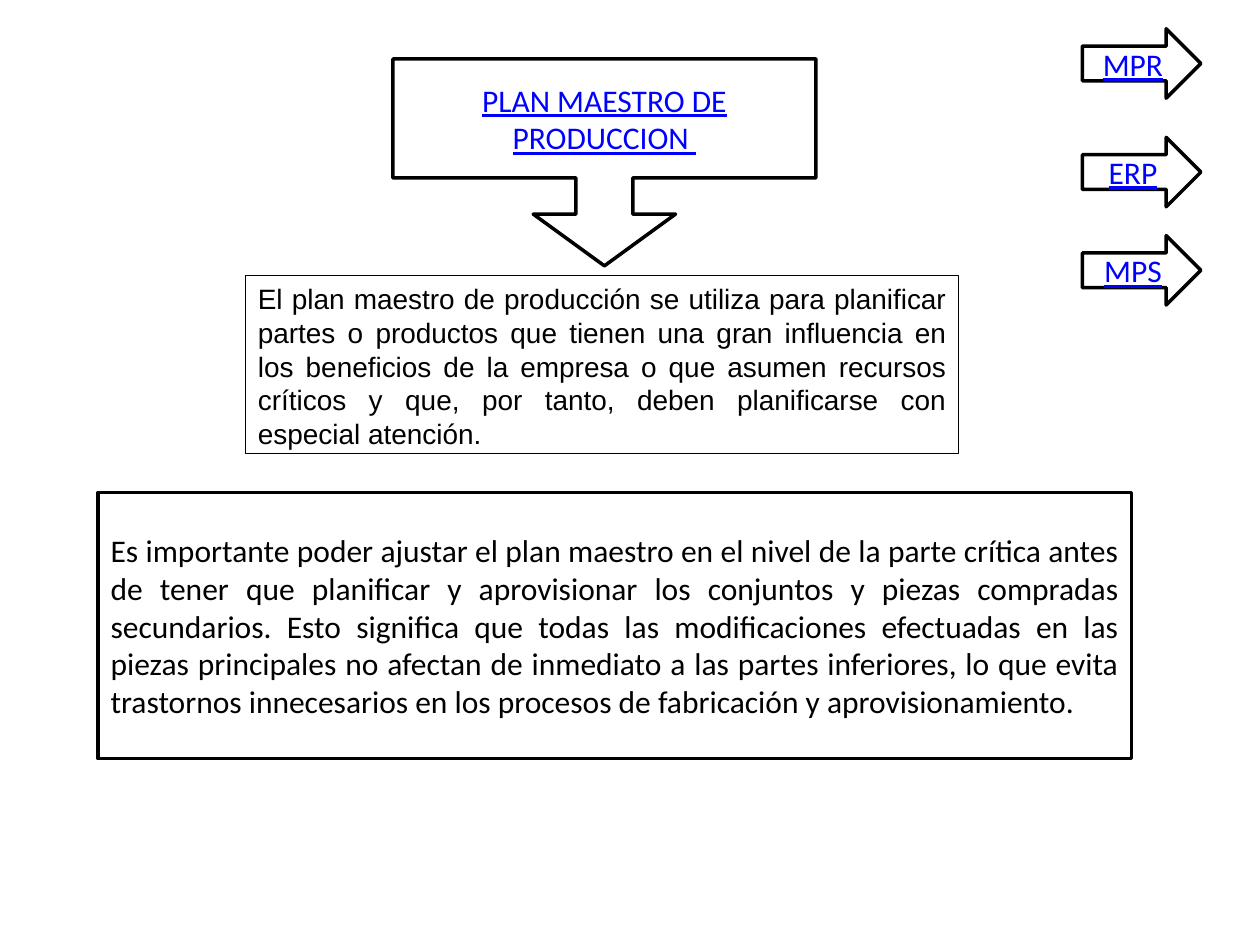
from dataclasses import dataclass

from pptx import Presentation
from pptx.dml.color import RGBColor
from pptx.enum.shapes import MSO_SHAPE
from pptx.enum.text import MSO_ANCHOR, PP_ALIGN
from pptx.util import Cm, Pt

CALLOUT = MSO_SHAPE.DOWN_ARROW_CALLOUT
PROCESS = MSO_SHAPE.FLOWCHART_PROCESS
ARROW = MSO_SHAPE.RIGHT_ARROW
TOP, MIDDLE = MSO_ANCHOR.TOP, MSO_ANCHOR.MIDDLE
CENTER, JUSTIFY = PP_ALIGN.CENTER, PP_ALIGN.JUSTIFY


@dataclass(frozen=True)
class Theme:
    paper: RGBColor = RGBColor(0xFF, 0xFF, 0xFF)
    ink: RGBColor = RGBColor(0x00, 0x00, 0x00)
    reference: RGBColor = RGBColor(0x00, 0x00, 0xFF)
    body_font: str = "Calibri"
    definition_font: str = "Arial"
    body_size: Pt = Pt(18)
    definition_size: Pt = Pt(16)
    thick: Pt = Pt(2)
    thin: Pt = Pt(0.75)


THEME = Theme()

HEADING = "PLAN MAESTRO DE PRODUCCION "
DEFINITION = (
    "El plan maestro de producción se utiliza para planificar partes o productos "
    "que tienen una gran influencia en los beneficios de la empresa o que asumen "
    "recursos críticos y que, por tanto, deben planificarse con especial atención."
)
IMPORTANCE = (
    "Es importante poder ajustar el plan maestro en el nivel de la parte crítica "
    "antes de tener que planificar y aprovisionar los conjuntos y piezas compradas "
    "secundarios. Esto significa que todas las modificaciones efectuadas en las "
    "piezas principales no afectan de inmediato a las partes inferiores, lo que "
    "evita trastornos innecesarios en los procesos de fabricación y "
    "aprovisionamiento."
)
SYSTEMS = [("MPR", 0.58), ("ERP", 2.77), ("MPS", 4.75)]


def add_outlined(slide, preset, box, border):
    outlined = slide.shapes.add_shape(preset, *(Cm(length) for length in box))
    outlined.shadow.inherit = False
    outlined.fill.solid()
    outlined.fill.fore_color.rgb = THEME.paper
    outlined.line.color.rgb = THEME.ink
    outlined.line.width = border
    return outlined


def write(holder, wording, align, anchor, font_name, size, color):
    frame = holder.text_frame
    frame.word_wrap = True
    frame.vertical_anchor = anchor
    frame.text = wording
    paragraph = frame.paragraphs[0]
    paragraph.alignment = align
    font = paragraph.runs[0].font
    font.name = font_name
    font.size = size
    font.color.rgb = color
    return paragraph


def add_reference(slide, preset, box, wording):
    reference = add_outlined(slide, preset, box, THEME.thick)
    paragraph = write(reference, wording, CENTER, MIDDLE,
                      THEME.body_font, THEME.body_size, THEME.reference)
    paragraph.runs[0].font.underline = True
    return reference


def add_definition(slide, box, wording):
    definition = add_outlined(slide, PROCESS, box, THEME.thin)
    paragraph = write(definition, wording, JUSTIFY, TOP,
                      THEME.definition_font, THEME.definition_size, THEME.ink)
    paragraph.space_after = Pt(10)


def add_explanation(slide, box, wording):
    explanation = add_outlined(slide, PROCESS, box, THEME.thick)
    write(explanation, wording, JUSTIFY, MIDDLE,
          THEME.body_font, THEME.body_size, THEME.ink)


def main():
    deck = Presentation()
    deck.slide_width, deck.slide_height = Cm(25.4), Cm(19.05)
    slide = deck.slides.add_slide(deck.slide_layouts[6])

    heading = add_reference(slide, CALLOUT, (7.92, 1.19, 8.53, 4.17), HEADING)
    for index, ratio in enumerate((0.275, 0.344, 0.25, 0.575)):
        heading.adjustments[index] = ratio

    add_definition(slide, (4.95, 5.56, 14.38, 3.58), DEFINITION)
    add_explanation(slide, (1.98, 9.93, 20.83, 5.36), IMPORTANCE)
    for system, top in SYSTEMS:
        add_reference(slide, ARROW, (21.82, top, 2.39, 1.4), system)

    deck.save("out.pptx")


if __name__ == "__main__":
    main()
